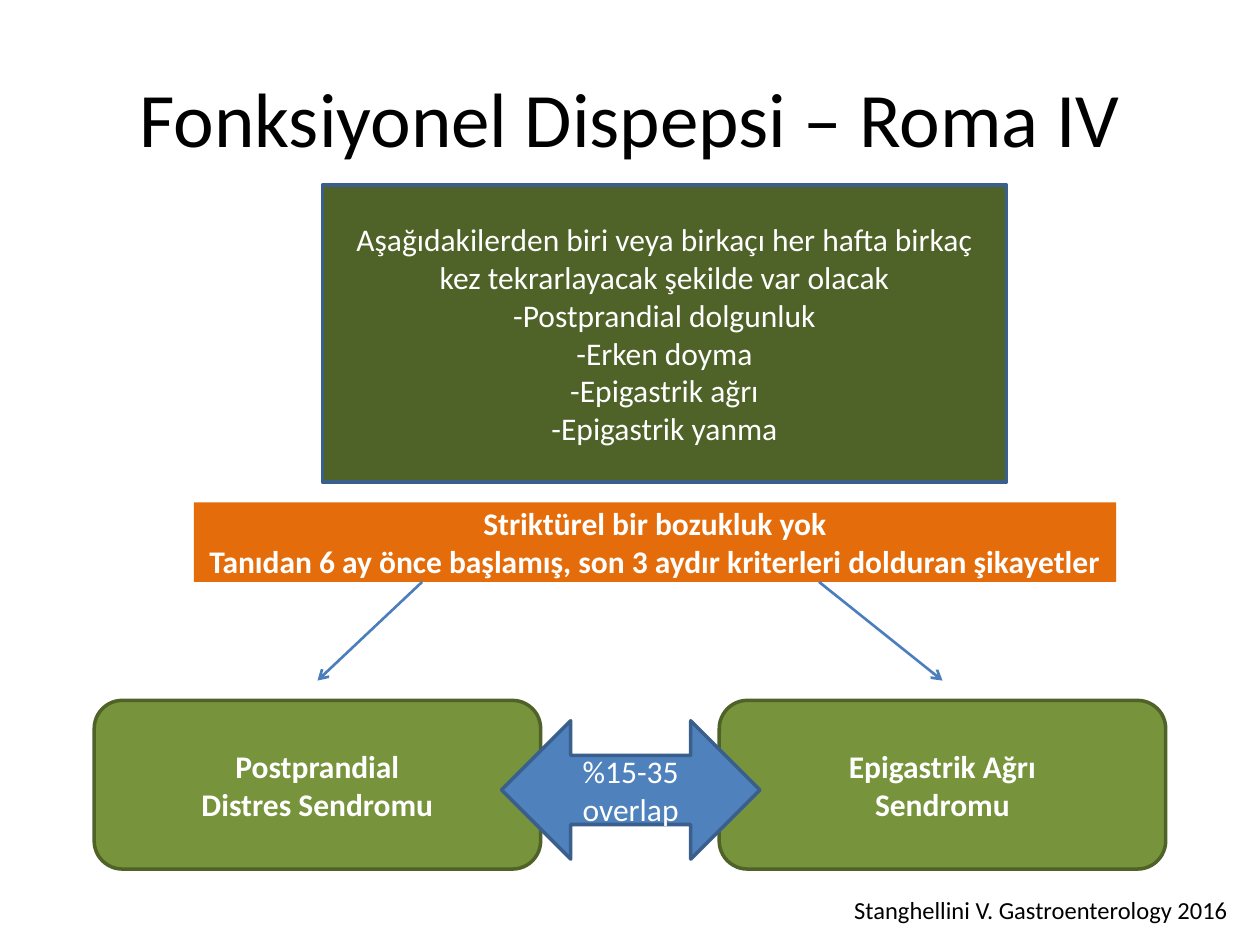
"""Build the Rome IV functional dyspepsia slide."""
import pptx
import pptx.dml.color
import pptx.enum.shapes
import pptx.enum.text
import pptx.oxml.ns
import pptx.util
from lxml import etree

Cm, Pt = pptx.util.Cm, pptx.util.Pt
RGBColor = pptx.dml.color.RGBColor
SHAPE = pptx.enum.shapes.MSO_SHAPE
ALIGN = pptx.enum.text.PP_ALIGN
ANCHOR = pptx.enum.text.MSO_ANCHOR

BLACK = RGBColor(0x00, 0x00, 0x00)
WHITE = RGBColor(0xFF, 0xFF, 0xFF)
OLIVE = RGBColor(0x4F, 0x62, 0x28)
GREEN = RGBColor(0x77, 0x93, 0x3C)
ORANGE = RGBColor(0xE4, 0x6C, 0x0A)
BLUE = RGBColor(0x4F, 0x81, 0xBD)
NAVY = RGBColor(0x3A, 0x5F, 0x8C)
ARROW_BLUE = RGBColor(0x4B, 0x7E, 0xBC)

TITLE = "Fonksiyonel Dispepsi – Roma IV"
CITATION = "Stanghellini V. Gastroenterology 2016"
CRITERIA = [
    "Aşağıdakilerden biri veya birkaçı her hafta birkaç kez tekrarlayacak şekilde var olacak",
    "-Postprandial dolgunluk",
    "-Erken doyma",
    "-Epigastrik ağrı",
    "-Epigastrik yanma",
]
CONDITIONS = [
    "Striktürel bir bozukluk yok",
    "Tanıdan 6 ay önce başlamış, son 3 aydır kriterleri dolduran şikayetler",
]
POSTPRANDIAL = ["Postprandial", "Distres Sendromu"]
EPIGASTRIC = ["Epigastrik Ağrı", "Sendromu"]
OVERLAP = ["%15-35", "overlap"]

BOXES = [
    (SHAPE.RECTANGLE, (6.5, 3.73, 13.79, 5.99), OLIVE, NAVY, CRITERIA, False),
    (SHAPE.RECTANGLE, (3.91, 10.13, 18.59, 1.6), ORANGE, None, CONDITIONS, True),
    (SHAPE.ROUNDED_RECTANGLE, (1.9, 14.12, 9, 3.4), GREEN, OLIVE, POSTPRANDIAL, True),
    (SHAPE.ROUNDED_RECTANGLE, (14.5, 14.12, 9, 3.4), GREEN, OLIVE, EPIGASTRIC, True),
    (SHAPE.LEFT_RIGHT_ARROW, (10.11, 14.53, 5.21, 2.79), BLUE, NAVY, OVERLAP, False),
]
ARROWS = [(8.51, 11.73, 6.4, 13.72), (16.51, 11.73, 19, 13.72)]


def write(tf, lines, size=18, color=WHITE, bold=False, align=ALIGN.CENTER,
          anchor=ANCHOR.MIDDLE, wrap=True):
    tf.word_wrap = wrap
    tf.vertical_anchor = anchor
    for i, line in enumerate(lines):
        p = tf.paragraphs[0] if i == 0 else tf.add_paragraph()
        p.alignment = align
        r = p.add_run()
        r.text = line
        r.font.name = "Calibri"
        r.font.size = Pt(size)
        r.font.bold = bold
        r.font.color.rgb = color


def add_box(s, kind, place, fill, line, lines, bold):
    sp = s.shapes.add_shape(kind, *map(Cm, place))
    sp.shadow.inherit = False
    sp.fill.solid()
    sp.fill.fore_color.rgb = fill
    if line is None:
        sp.line.fill.background()
    else:
        sp.line.color.rgb = line
        sp.line.width = Pt(2)
    write(sp.text_frame, lines, bold=bold)


def add_arrow(s, ends):
    cx = s.shapes.add_connector(pptx.enum.shapes.MSO_CONNECTOR.STRAIGHT, *map(Cm, ends))
    cx.line.color.rgb = ARROW_BLUE
    cx.line.width = Pt(1.5)
    qn = pptx.oxml.ns.qn
    etree.SubElement(cx.line._get_or_add_ln(), qn("a:tailEnd"), type="arrow")
    etree.SubElement(cx._element.spPr, qn("a:effectLst"))


def main():
    prs = pptx.Presentation()
    prs.slide_width, prs.slide_height = Cm(25.4), Cm(19.05)
    s = prs.slides.add_slide(prs.slide_layouts[5])

    title = s.shapes.title
    title.left, title.top, title.width, title.height = map(Cm, (1.27, 0.76, 22.86, 3.18))
    write(title.text_frame, [TITLE], size=44, color=BLACK)

    for box in BOXES[:-1]:
        add_box(s, *box)

    sp = s.shapes.add_textbox(*map(Cm, (16.97, 17.91, 8.13, 0.86)))
    write(sp.text_frame, [CITATION], size=14, color=BLACK, align=ALIGN.LEFT,
          anchor=ANCHOR.TOP, wrap=False)
    sp.text_frame.auto_size = pptx.enum.text.MSO_AUTO_SIZE.SHAPE_TO_FIT_TEXT

    for ends in ARROWS:
        add_arrow(s, ends)
    add_box(s, *BOXES[-1])

    prs.save("out.pptx")


if __name__ == "__main__":
    main()
